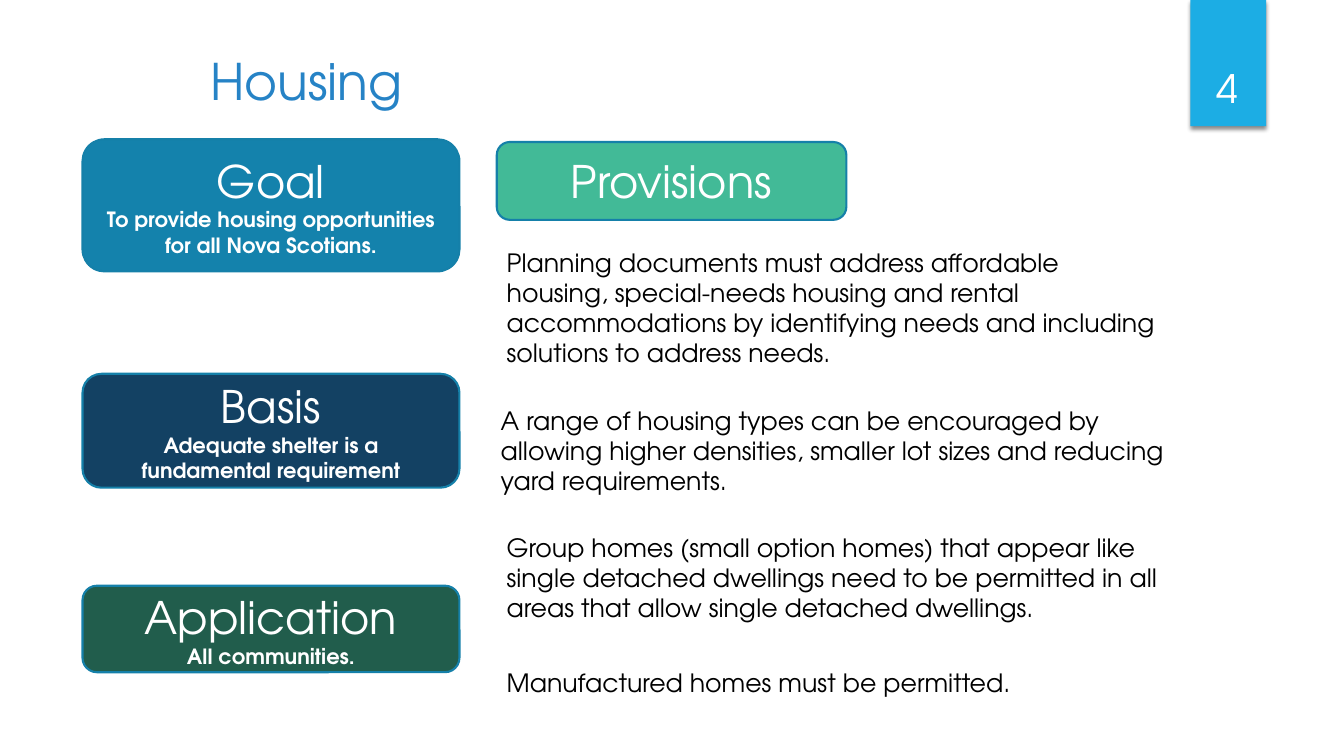
from lxml.etree import SubElement
from pptx import Presentation
from pptx.dml.color import RGBColor
from pptx.enum.shapes import MSO_SHAPE
from pptx.enum.text import MSO_ANCHOR, MSO_AUTO_SIZE, PP_ALIGN
from pptx.oxml.ns import qn
from pptx.util import Cm, Pt


def color(value):
    return RGBColor.from_string(value)


def add_box(kind, left, top, width, height, lines, fill=None, outline=None,
            align=PP_ALIGN.CENTER, anchor=MSO_ANCHOR.MIDDLE):
    box = page.shapes.add_shape(kind, Cm(left), Cm(top), Cm(width), Cm(height))
    box.shadow.inherit = False
    if fill:
        box.fill.solid()
        box.fill.fore_color.rgb = color(fill)
    else:
        box.fill.background()
    if outline:
        box.line.color.rgb = color(outline)
        box.line.width = Pt(1.5)
    else:
        box.line.fill.background()
    frame = box.text_frame
    frame.word_wrap = True
    frame.vertical_anchor = anchor
    for index, (text, size, bold, ink) in enumerate(lines):
        para = frame.add_paragraph() if index else frame.paragraphs[0]
        para.text = text
        para.alignment = align
        para.font.name = "TeX Gyre Adventor"
        para.font.size = Pt(size)
        para.font.bold = bold
        para.font.color.rgb = color(ink)
    return box


deck = Presentation()
deck.slide_width = Cm(33.87)
deck.slide_height = Cm(19.05)
page = deck.slides.add_slide(deck.slide_layouts[6])

ribbon = add_box(MSO_SHAPE.RECTANGLE, 30, 0, 1.91, 3.18, [], "1CADE4")
effects = ribbon._element.spPr.find(qn("a:effectLst"))
shadow = SubElement(effects, qn("a:outerShdw"), blurRad=str(Pt(3)),
                    dist=str(Pt(2)), dir="5400000", rotWithShape="0")
shade = SubElement(shadow, qn("a:srgbClr"), val="000000")
SubElement(shade, qn("a:alpha"), val="45000")

add_box(MSO_SHAPE.RECTANGLE, 5.05, 1.04, 24.33, 1.96,
        [("Housing", 36, False, "2683C6")], align=PP_ALIGN.LEFT)
add_box(MSO_SHAPE.RECTANGLE, 29.77, 0.81, 2.34, 2.13,
        [("4", 28, False, "FFFFFF")], anchor=MSO_ANCHOR.BOTTOM)

cards = [
    (2.08, 3.51, 9.5, 3.33, "1482AC", "Goal",
     ["To provide housing opportunities for all Nova Scotians."]),
    (2.08, 9.42, 9.5, 2.87, "134163", "Basis",
     ["Adequate shelter is a", "fundamental requirement"]),
    (2.08, 14.76, 9.5, 2.18, "215D4C", "Application", ["All communities."]),
    (12.52, 3.58, 8.81, 1.96, "42BA97", "Provisions", []),
]
for left, top, width, height, fill, heading, details in cards:
    lines = [(heading, 32, False, "FFFFFF")]
    lines += [(detail, 15, True, "FFFFFF") for detail in details]
    add_box(MSO_SHAPE.ROUNDED_RECTANGLE, left, top, width, height, lines, fill, "1580A9")

provisions = [
    (12.52, 6.1, 3.33, "Planning documents must address affordable housing, "
     "special-needs housing and rental accommodations by identifying needs "
     "and including solutions to address needs."),
    (12.37, 10.08, 2.57, "A range of housing types can be encouraged by allowing "
     "higher densities, smaller lot sizes and reducing yard requirements."),
    (12.52, 13.28, 2.57, "Group homes (small option homes) that appear like single "
     "detached dwellings need to be permitted in all areas that allow single "
     "detached dwellings."),
    (12.52, 16.69, 1.02, "Manufactured homes must be permitted."),
]
for left, top, height, text in provisions:
    box = add_box(MSO_SHAPE.PENTAGON, left, top, 17.93, height,
                  [(text, 18, False, "000000")],
                  align=PP_ALIGN.LEFT, anchor=MSO_ANCHOR.TOP)
    box.text_frame.auto_size = MSO_AUTO_SIZE.SHAPE_TO_FIT_TEXT

deck.save("out.pptx")
